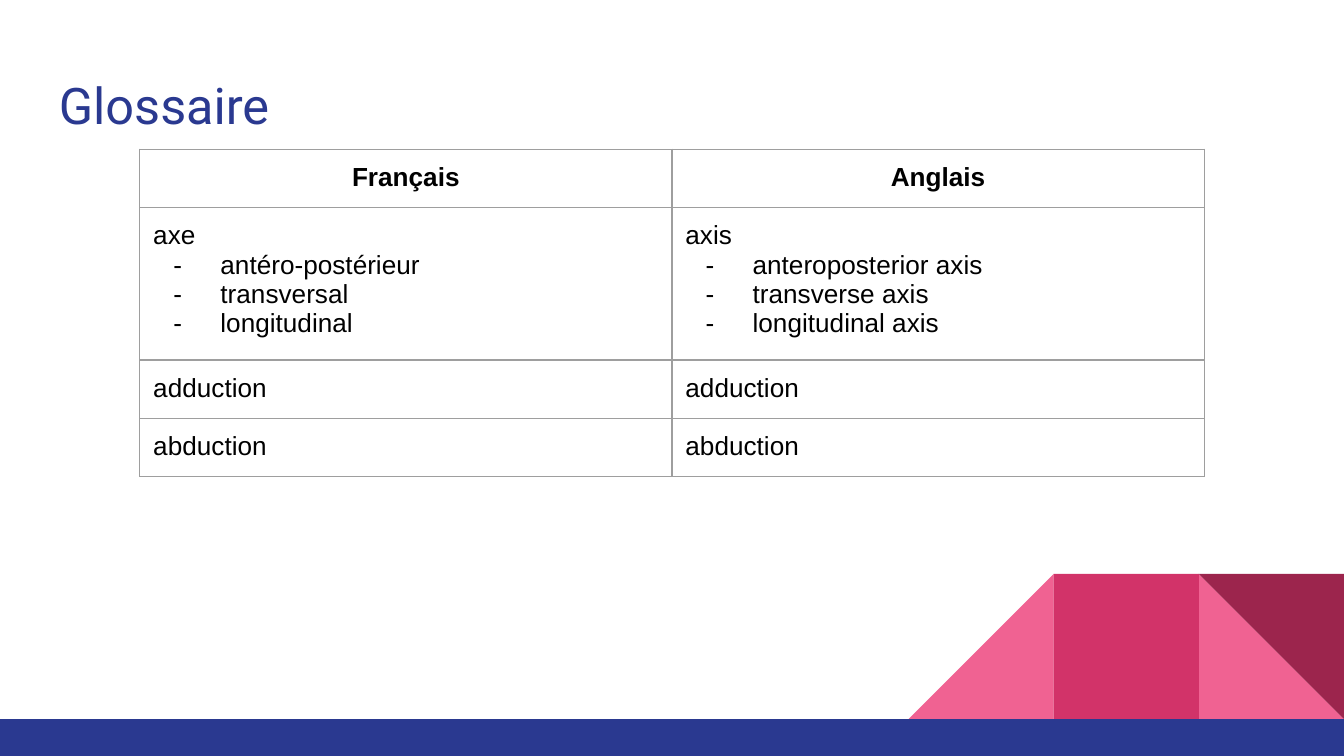
"""Build the bilingual glossary slide."""
from dataclasses import dataclass

from lxml.etree import SubElement
from pptx import Presentation
from pptx.dml.color import RGBColor
from pptx.enum.shapes import MSO_SHAPE as Shape
from pptx.enum.text import MSO_ANCHOR as Anchor, PP_ALIGN as Align
from pptx.oxml.ns import qn
from pptx.util import Inches, Pt

COLORS = {
    "navy": "2A3990",
    "pink": "F06292",
    "rose": "D23369",
    "wine": "9C254D",
    "border": "9E9E9E",
    "black": "000000",
}
PAGE_WIDTH = 10
PAGE_HEIGHT = PAGE_WIDTH * 9 / 16
TILE = 1.08
FLOOR = 5.35
TILE_TOP = FLOOR - TILE
ROW_HEIGHT = 0.42
TABLE_HEIGHT = 2.43
TITLE_FONT = {"name": "Roboto", "size": Pt(27)}
CELL_FONT = {"name": "Arial", "size": Pt(14), "bold": False}
HEADER_FONT = CELL_FONT | {"bold": True}
INSETS = {f"margin_{side}": Inches(0.1) for side in ("left", "top", "right", "bottom")}


@dataclass(frozen=True)
class Block:
    kind: Shape
    color: str
    left: float
    top: float
    width: float = TILE
    height: float = TILE
    rotation: int = 0


@dataclass(frozen=True)
class Entry:
    term: str
    details: tuple[str, ...] = ()


BLOCKS = (
    Block(Shape.RIGHT_TRIANGLE, "pink", PAGE_WIDTH - TILE, TILE_TOP),
    Block(Shape.RIGHT_TRIANGLE, "pink", PAGE_WIDTH - 3 * TILE, TILE_TOP, rotation=270),
    Block(Shape.RECTANGLE, "rose", PAGE_WIDTH - 2 * TILE, TILE_TOP),
    Block(Shape.RIGHT_TRIANGLE, "wine", PAGE_WIDTH - TILE, TILE_TOP, rotation=180),
    Block(Shape.RECTANGLE, "navy", 0, FLOOR, PAGE_WIDTH, PAGE_HEIGHT - FLOOR),
)
GLOSSARY = (
    (Entry("Français"), Entry("Anglais")),
    (
        Entry("axe", ("antéro-postérieur", "transversal", "longitudinal")),
        Entry("axis", ("anteroposterior axis", "transverse axis", "longitudinal axis")),
    ),
    (Entry("adduction"), Entry("adduction")),
    (Entry("abduction"), Entry("abduction")),
)


def rgb(name: str) -> RGBColor:
    """Return a named colour."""
    return RGBColor.from_string(COLORS[name])


def apply(target, values: dict) -> None:
    """Set each attribute in values on the target."""
    for name, value in values.items():
        setattr(target, name, value)


def add_span(para, text: str, font: dict, color: str) -> None:
    """Add a formatted run to a paragraph."""
    span = para.add_run()
    span.text = text
    apply(span.font, font)
    span.font.color.rgb = rgb(color)


def add_block(page, block: Block) -> None:
    """Draw one flat decorative shape."""
    bounds = map(Inches, (block.left, block.top, block.width, block.height))
    shape = page.shapes.add_shape(block.kind, *bounds)
    shape.shadow.inherit = False
    shape.rotation = block.rotation
    shape.fill.solid()
    shape.fill.fore_color.rgb = rgb(block.color)
    shape.line.fill.background()


def add_title(page, text: str) -> None:
    """Write the slide title."""
    box = page.shapes.add_textbox(*map(Inches, (0.34, 0.45, 9.32, 0.66)))
    apply(box.text_frame, INSETS | {"word_wrap": True, "vertical_anchor": Anchor.MIDDLE})
    add_span(box.text_frame.paragraphs[0], text, TITLE_FONT, "navy")


def add_dash(para) -> None:
    """Give a paragraph a hanging dash bullet."""
    props = para._p.get_or_add_pPr()
    props.set("marL", str(Inches(0.5)))
    props.set("indent", str(-Inches(0.35)))
    color = SubElement(props, qn("a:buClr"))
    SubElement(color, qn("a:srgbClr"), val=COLORS["black"])
    SubElement(props, qn("a:buFont"), typeface="Arial")
    SubElement(props, qn("a:buChar"), char="-")


def add_borders(cell) -> None:
    """Outline all four sides of a cell."""
    props = cell._tc.get_or_add_tcPr()
    for side in "LRTB":
        line = SubElement(props, qn(f"a:ln{side}"), w=str(Pt(0.75)))
        fill = SubElement(line, qn("a:solidFill"))
        SubElement(fill, qn("a:srgbClr"), val=COLORS["border"])


def fill_cell(cell, entry: Entry, header: bool) -> None:
    """Write a glossary entry into a cell."""
    apply(cell, INSETS)
    add_borders(cell)
    cell.fill.background()
    para = cell.text_frame.paragraphs[0]
    para.alignment = Align.CENTER if header else Align.LEFT
    add_span(para, entry.term, HEADER_FONT if header else CELL_FONT, "black")
    for detail in entry.details:
        para = cell.text_frame.add_paragraph()
        add_dash(para)
        add_span(para, detail, CELL_FONT, "black")


def add_glossary(page) -> None:
    """Draw the glossary table."""
    bounds = map(Inches, (1.04, 1.11, 7.92, TABLE_HEIGHT))
    frame = page.shapes.add_table(len(GLOSSARY), 2, *bounds)
    table = frame.table
    apply(table, {"first_row": False, "horz_banding": False})
    for index, entries in enumerate(GLOSSARY):
        table.rows[index].height = Inches(ROW_HEIGHT)
        for column, entry in enumerate(entries):
            fill_cell(table.cell(index, column), entry, header=index == 0)
    frame.height = Inches(TABLE_HEIGHT)


def main() -> None:
    """Build and save the deck."""
    deck = Presentation()
    apply(deck, {"slide_width": Inches(PAGE_WIDTH), "slide_height": Inches(PAGE_HEIGHT)})
    page = deck.slides.add_slide(deck.slide_layouts[6])
    for block in BLOCKS:
        add_block(page, block)
    add_title(page, "Glossaire")
    add_glossary(page)
    deck.save("out.pptx")


if __name__ == "__main__":
    main()
